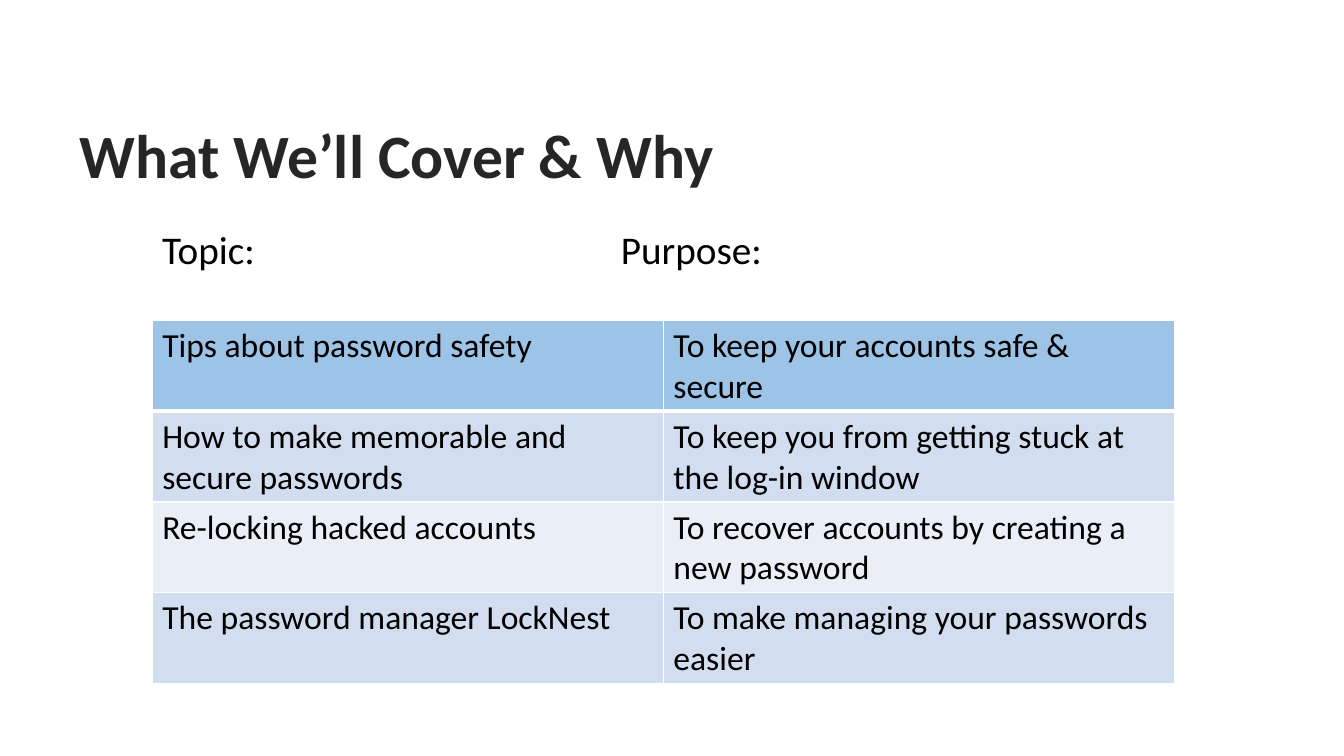
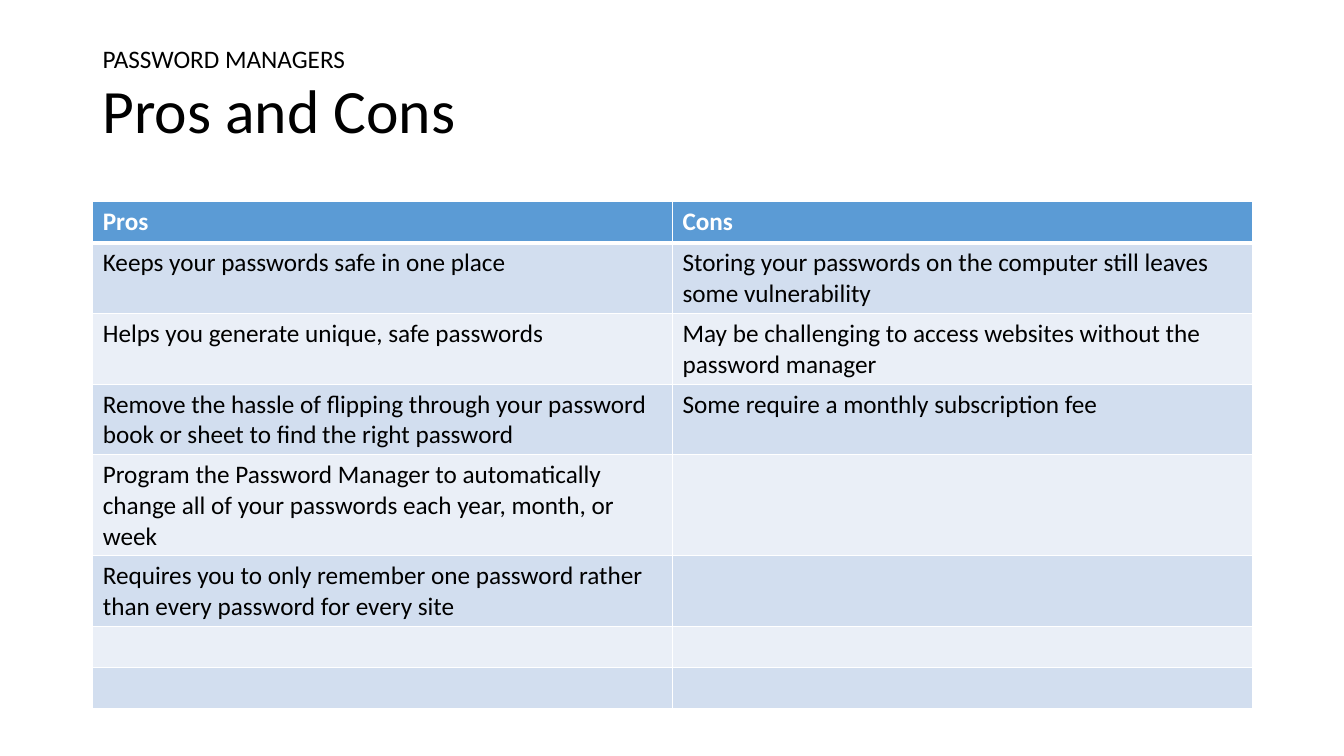
from lxml import etree
from pptx import Presentation
from pptx.dml.color import RGBColor
from pptx.enum.text import MSO_ANCHOR
from pptx.oxml.ns import qn
from pptx.util import Emu, Pt

TOP, MIDDLE = MSO_ANCHOR.TOP, MSO_ANCHOR.MIDDLE

PX = 9144  # EMU per px, 100 px to the inch
SLIDE_SIZE = (1333, 750)
ROW_HEIGHT = 41
FONT = "Calibri"
BLACK, WHITE, CHARCOAL = "000000", "FFFFFF", "262626"
BLUE, LIGHT_BLUE = "5B9BD5", "9DC3E6"
BANDS = ("D2DEEF", "EAEFF7")
THIN, THICK = 1, 3

TITLE = {"size": 44, "color": BLACK}
LABEL = {"size": 28, "color": BLACK}
KICKER = {"size": 18, "color": BLACK}

SLIDES = [
    {
        "texts": [
            {"text": "What We’ll Cover & Why", "at": (69, 81, 1050, 143),
             "style": {**TITLE, "color": CHARCOAL, "bold": True}, "anchor": MIDDLE},
            {"text": "Topic:", "at": (151, 219, 113, 57), "style": LABEL, "wrap": False},
            {"text": "Purpose:", "at": (606, 219, 162, 57), "style": LABEL, "wrap": False},
        ],
        "table": {
            "at": (151, 318), "width": 1014, "head_fill": LIGHT_BLUE,
            "head": {"size": 24, "color": BLACK, "bold": False},
            "body": {"size": 24, "color": BLACK},
            "rows": [
                ("Tips about password safety", "To keep your accounts safe & secure"),
                ("How to make memorable and secure passwords",
                 "To keep you from getting stuck at the log-in window"),
                ("Re-locking hacked accounts",
                 "To recover accounts by creating a new password"),
                ("The password manager LockNest",
                 "To make managing your passwords easier"),
            ],
        },
    },
    {
        "texts": [
            {"text": "Pros and Cons", "at": (92, 40, 1150, 145), "style": TITLE,
             "anchor": MIDDLE, "line_spacing": 0.9},
            {"text": "PASSWORD MANAGERS", "at": (92, 38, 830, 40), "style": KICKER},
        ],
        "table": {
            "at": (92, 200), "width": 1150, "head_fill": BLUE,
            "head": {"size": 18, "color": WHITE, "bold": True},
            "body": {"size": 18, "color": BLACK},
            "rows": [
                ("Pros", "Cons"),
                ("Keeps your passwords safe in one place",
                 "Storing your passwords on the computer still leaves some vulnerability"),
                ("Helps you generate unique, safe passwords",
                 "May be challenging to access websites without the password manager"),
                ("Remove the hassle of flipping through your password book or sheet "
                 "to find the right password",
                 "Some require a monthly subscription fee"),
                ("Program the Password Manager to automatically change all of your "
                 "passwords each year, month, or week", ""),
                ("Requires you to only remember one password rather than every "
                 "password for every site", ""),
                ("", ""),
                ("", ""),
            ],
        },
    },
]


def px(*lengths):
    return [Emu(length * PX) for length in lengths]


def rgb(color):
    return RGBColor.from_string(color)


def write(frame, text, size, color, bold=False):
    """Put one styled run into the first paragraph of a text frame."""
    para = frame.paragraphs[0]
    if text:
        span = para.add_run()
        span.text = text
        span.font.color.rgb = rgb(color)
        for name, value in {"name": FONT, "size": Pt(size), "bold": bold}.items():
            setattr(span.font, name, value)
    return para


def add_text(page, text, at, style, anchor=TOP, wrap=True, line_spacing=None):
    frame = page.shapes.add_textbox(*px(*at)).text_frame
    frame.word_wrap = wrap
    frame.vertical_anchor = anchor
    write(frame, text, **style).line_spacing = line_spacing


def set_borders(cell, top, bottom):
    """Draw white cell borders; top and bottom widths are in points."""
    properties = cell._tc.get_or_add_tcPr()
    for side, width in {"L": THIN, "R": THIN, "T": top, "B": bottom}.items():
        line = etree.SubElement(properties, qn(f"a:ln{side}"), w=str(Pt(width)))
        fill = etree.SubElement(line, qn("a:solidFill"))
        etree.SubElement(fill, qn("a:srgbClr"), val=WHITE)


def add_banded_table(page, at, width, head_fill, head, body, rows):
    columns = len(rows[0])
    size = (width, ROW_HEIGHT * len(rows))
    table = page.shapes.add_table(len(rows), columns, *px(*at, *size)).table
    table.first_row = table.horz_banding = False
    for r, row in enumerate(rows):
        for c, text in enumerate(row):
            cell = table.cell(r, c)
            set_borders(cell, THICK if r == 1 else THIN, THICK if r == 0 else THIN)
            cell.fill.solid()
            cell.fill.fore_color.rgb = rgb(BANDS[(r - 1) % 2] if r else head_fill)
            write(cell.text_frame, text, **(body if r else head))


def main():
    deck = Presentation()
    deck.slide_width, deck.slide_height = px(*SLIDE_SIZE)
    for content in SLIDES:
        page = deck.slides.add_slide(deck.slide_layouts[6])
        for item in content["texts"]:
            add_text(page, **item)
        add_banded_table(page, **content["table"])
    deck.save("out.pptx")


if __name__ == "__main__":
    main()
